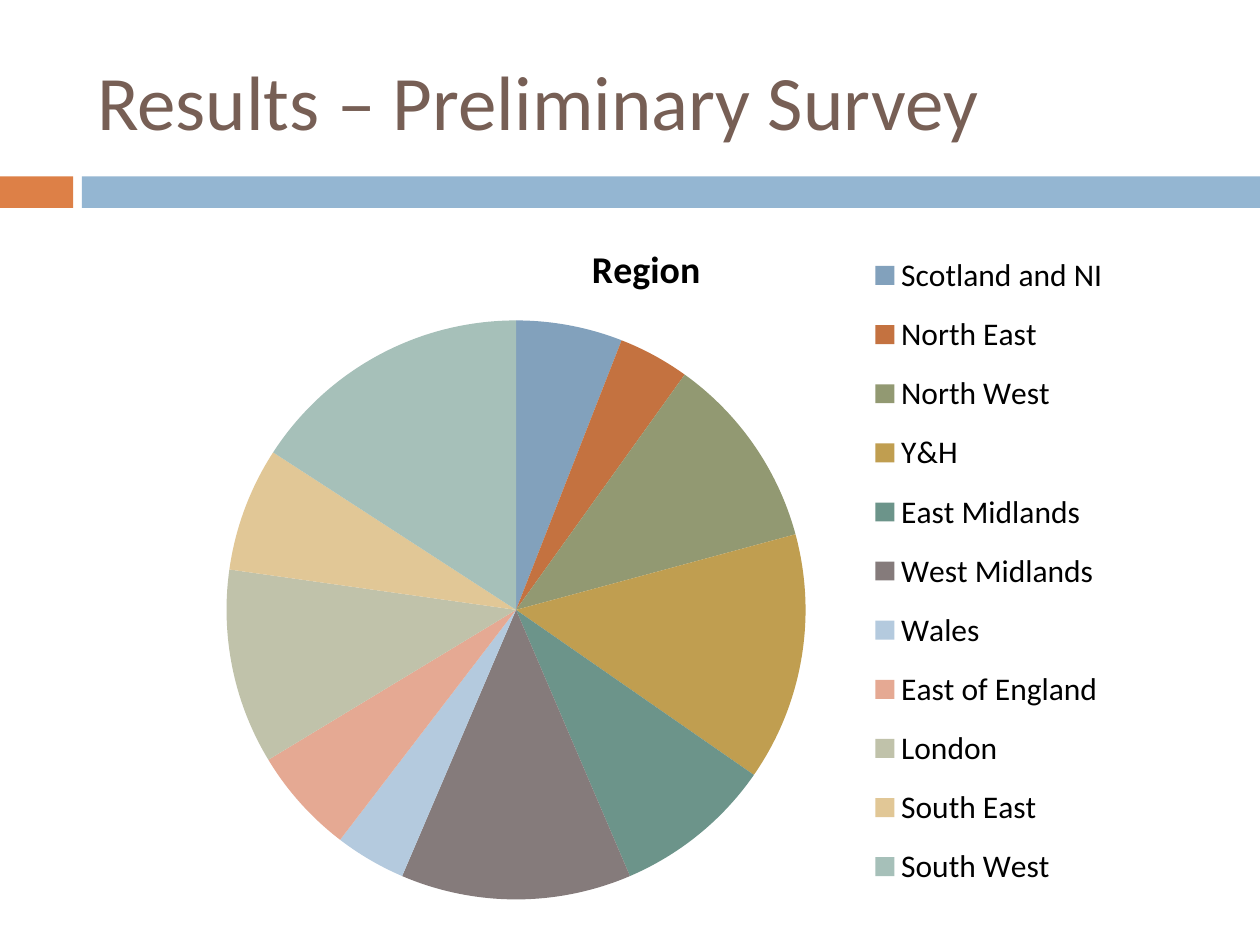
from lxml import etree
from pptx import Presentation
from pptx.chart.data import CategoryChartData
from pptx.dml.color import RGBColor
from pptx.enum.chart import XL_CHART_TYPE, XL_LEGEND_POSITION
from pptx.enum.shapes import MSO_SHAPE
from pptx.enum.text import MSO_ANCHOR, PP_ALIGN
from pptx.oxml.ns import qn
from pptx.util import Inches, Pt

FONT = "Calibri"
COLORS = {"heading": "775F55", "accent": "DD8047", "band": "94B6D2", "text": "000000"}
HEADING = "Results – Preliminary Survey"
CHART_TITLE = "Region"
REGIONS = [  # name, share in percent, slice colour
    ("Scotland and NI", 6, "82A1BC"),
    ("North East", 4, "C47240"),
    ("North West", 11, "929972"),
    ("Y&H", 14, "C09E50"),
    ("East Midlands", 9, "6C948A"),
    ("West Midlands", 13, "857B7B"),
    ("Wales", 4, "B4CADE"),
    ("East of England", 6, "E5A993"),
    ("London", 11, "C0C2AA"),
    ("South East", 7, "E1C796"),
    ("South West", 16, "A6C0B9"),
]
BANDS = [(0, 0.58, "accent"), (0.65, 9.35, "band")]  # left, width, colour
BAND_TOP, BAND_HEIGHT = 1.4, 0.25
# Fractions of the chart area: x, y, w, h
PIE_AREA = (0.065, 0.15, 0.6, 0.82)
LEGEND_AREA = (0.73, 0.03, 0.25, 0.95)


def style_font(font, size, color, bold=False):
    font.name, font.size, font.bold = FONT, Pt(size), bold
    font.color.rgb = RGBColor.from_string(COLORS[color])


def write(frame, text, size, color, bold=False, align=PP_ALIGN.LEFT):
    paragraph = frame.paragraphs[0]
    paragraph.alignment = align
    run = paragraph.add_run()
    run.text = text
    style_font(run.font, size, color, bold)


def add_band(slide, left, width, color):
    band = slide.shapes.add_shape(
        MSO_SHAPE.RECTANGLE, Inches(left), Inches(BAND_TOP), Inches(width), Inches(BAND_HEIGHT))
    band.shadow.inherit = False
    band.fill.solid()
    band.fill.fore_color.rgb = RGBColor.from_string(COLORS[color])
    band.line.fill.background()


def set_layout(parent, area, before, inner=False):
    """Fix a chart part to an area, placing its layout ahead of the first `before` child."""
    for old in parent.findall(qn("c:layout")):
        parent.remove(old)
    layout = etree.Element(qn("c:layout"))
    manual = etree.SubElement(layout, qn("c:manualLayout"))
    settings = [("layoutTarget", "inner")] if inner else []
    settings += [("xMode", "edge"), ("yMode", "edge"), *zip("xywh", area)]
    for tag, value in settings:
        etree.SubElement(manual, qn(f"c:{tag}")).set("val", str(value))
    parent.find(qn(before)).addprevious(layout)


def add_region_pie(slide):
    names, shares, fills = zip(*REGIONS)
    data = CategoryChartData()
    data.categories = names
    data.add_series(CHART_TITLE, shares)
    chart = slide.shapes.add_chart(
        XL_CHART_TYPE.PIE, Inches(1.3), Inches(1.7), Inches(7.66), Inches(5.61), data).chart
    style_font(chart.font, 18, "text")

    chart.has_title = True
    write(chart.chart_title.text_frame, CHART_TITLE, 21.6, "text", bold=True,
          align=PP_ALIGN.CENTER)
    chart.chart_title.include_in_layout = False

    chart.has_legend = True
    legend = chart.legend
    legend.position = XL_LEGEND_POSITION.RIGHT
    legend.include_in_layout = False
    style_font(legend.font, 18, "text")

    pie = chart.plots[0]
    pie.vary_by_categories = True
    for index, color in enumerate(fills):
        piece = pie.series[0].points[index].format
        piece.fill.solid()
        piece.fill.fore_color.rgb = RGBColor.from_string(color)
        piece.line.fill.background()

    plot_area = chart.element.find(".//" + qn("c:plotArea"))
    set_layout(plot_area, PIE_AREA, "c:pieChart", inner=True)
    set_layout(chart.element.find(".//" + qn("c:legend")), LEGEND_AREA, "c:overlay")


def main():
    deck = Presentation()
    deck.slide_width, deck.slide_height = Inches(10), Inches(7.5)
    slide = deck.slides.add_slide(deck.slide_layouts[5])

    for band in BANDS:
        add_band(slide, *band)

    heading = slide.shapes.title
    heading.left, heading.top = Inches(0.67), Inches(0.25)
    heading.width, heading.height = Inches(8.92), Inches(1.08)
    heading.text_frame.vertical_anchor = MSO_ANCHOR.MIDDLE
    write(heading.text_frame, HEADING, 44, "heading")

    add_region_pie(slide)
    deck.save("out.pptx")


if __name__ == "__main__":
    main()
